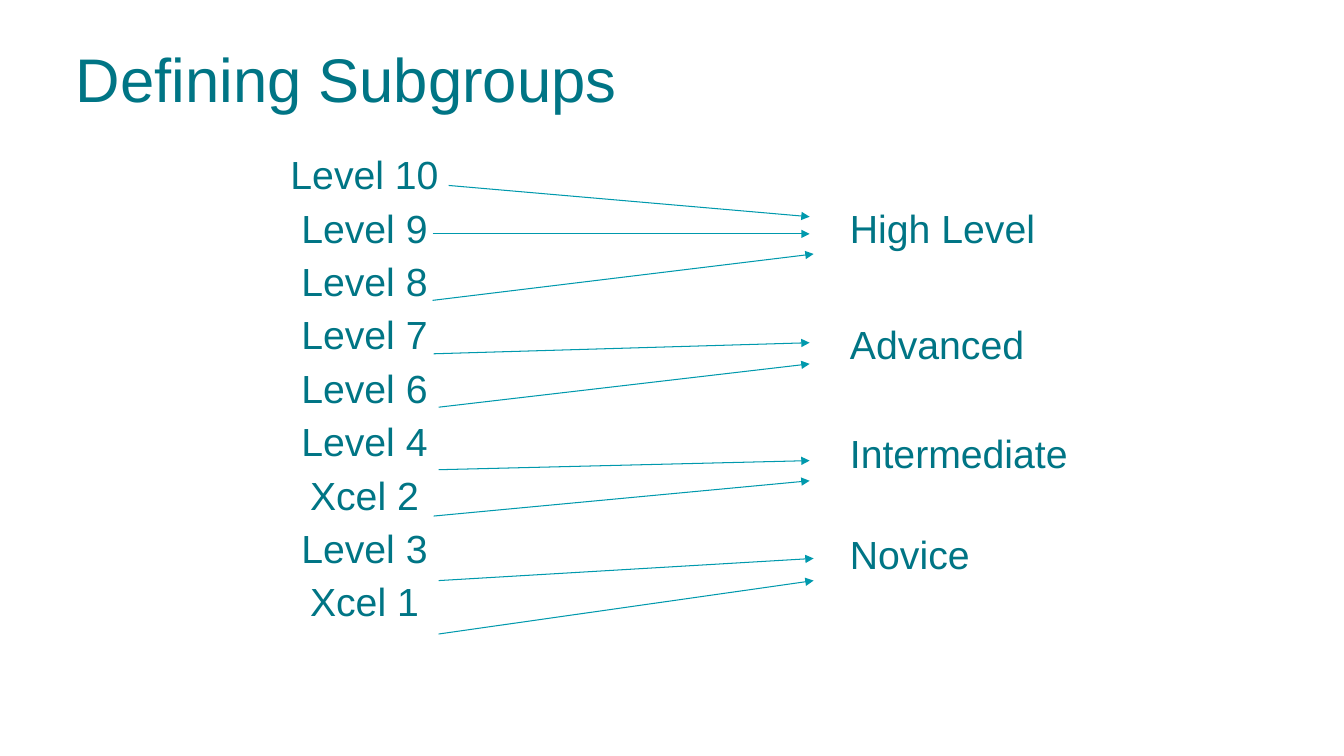
"""Build the slide that maps competition levels to four subgroups."""
from dataclasses import dataclass

from lxml import etree
from pptx import Presentation
from pptx.dml.color import RGBColor
from pptx.enum.shapes import MSO_CONNECTOR
from pptx.enum.text import MSO_ANCHOR, MSO_AUTO_SIZE, PP_ALIGN
from pptx.oxml.ns import qn
from pptx.slide import Slide
from pptx.text.text import _Paragraph
from pptx.util import Emu, Pt

STRAIGHT = MSO_CONNECTOR.STRAIGHT
TOP = MSO_ANCHOR.TOP
NO_AUTOFIT = MSO_AUTO_SIZE.NONE
LEFT, CENTER = PP_ALIGN.LEFT, PP_ALIGN.CENTER
FONT = "Arial"
TEXT_COLOR = "007585"
LINE_COLOR = "0099AD"
TITLE_ONLY = 5


@dataclass(frozen=True)
class Column:
    """A one-column table."""
    left: int
    top: int
    width: int
    labels: tuple[str, ...]
    heights: tuple[int, ...]
    align: PP_ALIGN


@dataclass(frozen=True)
class Arrow:
    """A straight arrow from a level to its subgroup."""
    x1: int
    y1: int
    x2: int
    y2: int


LEVELS = ("Level 10", "Level 9", "Level 8", "Level 7", "Level 6",
          "Level 4", "Xcel 2", "Level 3", "Xcel 1")
SUBGROUPS = ("High Level", "Advanced", "Intermediate", "Novice")
COLUMNS = (
    Column(228, 149, 267, LEVELS, (53,) * len(LEVELS), CENTER),
    Column(834, 202, 244, SUBGROUPS, (116, 108, 100, 100), LEFT),
)
ARROWS = (
    Arrow(445, 184, 803, 215),
    Arrow(429, 232, 803, 232),
    Arrow(429, 298, 807, 252),
    Arrow(430, 351, 803, 340),
    Arrow(435, 404, 803, 361),
    Arrow(435, 466, 803, 457),
    Arrow(430, 512, 803, 477),
    Arrow(435, 576, 807, 554),
    Arrow(435, 629, 807, 576),
)


def px(n: int) -> Emu:
    """Turn px, 100 to the inch, into EMU."""
    return Emu(n * 9144)


def color(value: str) -> RGBColor:
    """Turn a hex string into a colour."""
    return RGBColor.from_string(value)


def format_text(p: _Paragraph, size: int, align: PP_ALIGN) -> None:
    """Format a paragraph and its runs."""
    p.alignment = align
    for r in p.runs:
        r.font.name = FONT
        r.font.size = Pt(size)
        r.font.color.rgb = color(TEXT_COLOR)


def add_title(s: Slide, text: str) -> None:
    """Fill and place the title placeholder."""
    title = s.shapes.title
    title.left, title.top, title.width, title.height = map(px, (67, 30, 1200, 125))
    tf = title.text_frame
    tf.text = text
    tf.auto_size = NO_AUTOFIT
    tf.vertical_anchor = TOP
    tf.margin_left, tf.margin_top = px(8), px(11)
    format_text(tf.paragraphs[0], 44, LEFT)


def add_column(s: Slide, column: Column) -> None:
    """Add a plain table with one label in each row."""
    frame = s.shapes.add_table(
        len(column.labels), 1, px(column.left), px(column.top),
        px(column.width), px(sum(column.heights)))
    table = frame.table
    table.first_row = table.horz_banding = False
    for row, label, height in zip(table.rows, column.labels, column.heights):
        row.height = px(height)
        cell = row.cells[0]
        cell.fill.background()
        cell.margin_left = cell.margin_right = px(9)
        cell.margin_top, cell.margin_bottom = px(4), px(5)
        cell.vertical_anchor = TOP
        cell.text_frame.text = label
        format_text(cell.text_frame.paragraphs[0], 28, column.align)


def add_arrow(s: Slide, arrow: Arrow) -> None:
    """Add a thin line with a triangle at its end."""
    line = s.shapes.add_connector(
        STRAIGHT, px(arrow.x1), px(arrow.y1), px(arrow.x2), px(arrow.y2))
    line.line.color.rgb = color(LINE_COLOR)
    line.line.width = Pt(0.75)
    etree.SubElement(line.line._get_or_add_ln(), qn("a:tailEnd"), type="triangle")
    etree.SubElement(line._element.spPr, qn("a:effectLst"))


def main() -> None:
    """Build and save the slide."""
    prs = Presentation()
    prs.slide_width, prs.slide_height = px(1333), px(750)
    s = prs.slides.add_slide(prs.slide_layouts[TITLE_ONLY])
    add_title(s, "Defining Subgroups")
    for column in COLUMNS:
        add_column(s, column)
    for arrow in ARROWS:
        add_arrow(s, arrow)
    prs.save("out.pptx")


if __name__ == "__main__":
    main()
